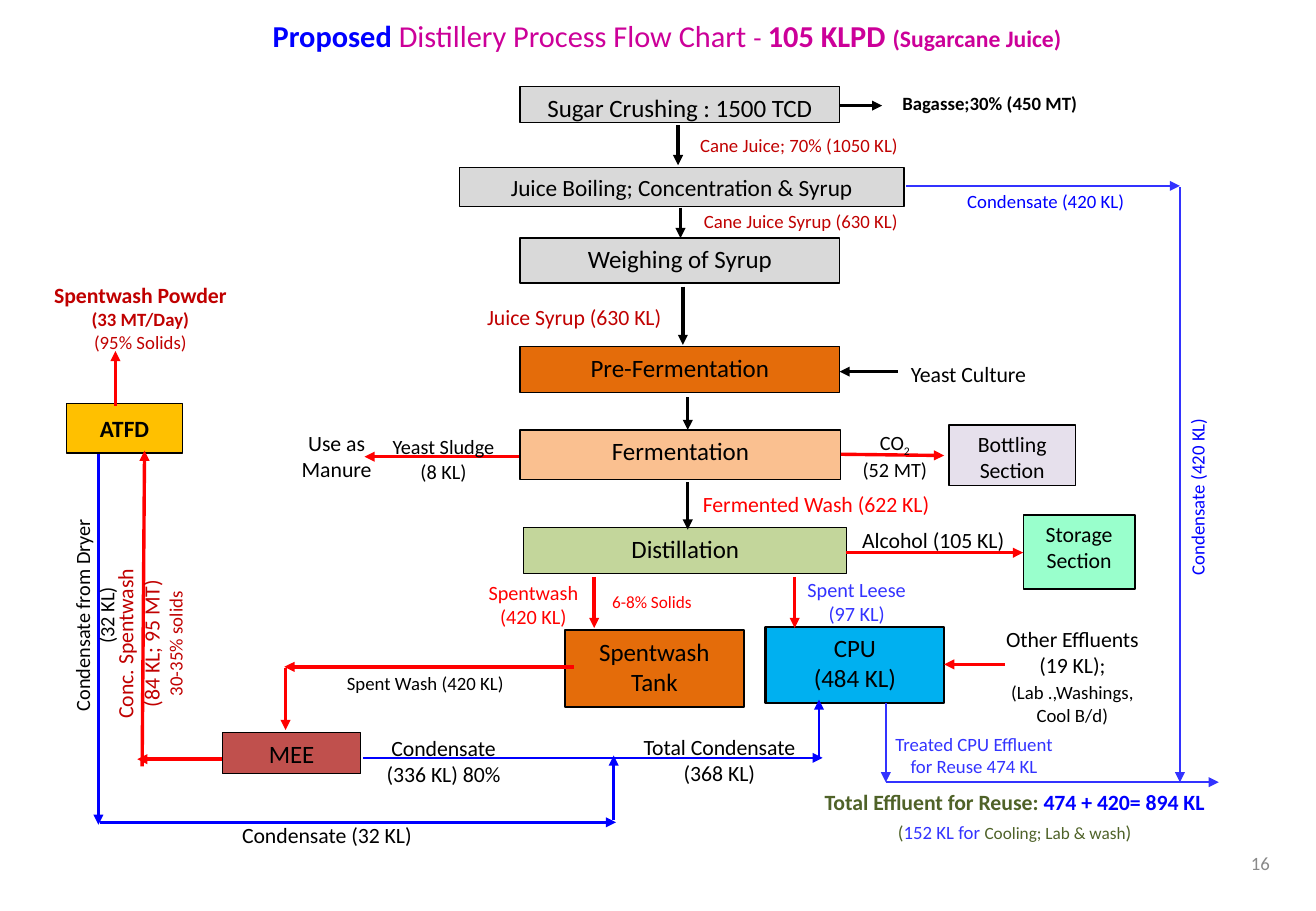
"""Build the distillery process flow chart slide."""
from pptx import Presentation, util as u
from pptx.dml.color import RGBColor
from pptx.enum import shapes, text
from pptx.oxml import ns
from lxml import etree

COLOURS = {
    "black": "000000", "grey": "D9D9D9", "orange": "E46C0A", "peach": "FAC090",
    "sage": "C3D69B", "amber": "FFC000", "sky": "00B0F0", "mint": "99FFCC",
    "lilac": "E6E0EC", "brick": "C0504D", "red": "FF0000", "crimson": "C00000",
    "blue": "0000FF", "indigo": "3333FF", "olive": "4F6228", "magenta": "CC0099",
    "page": "898989",
}
rgb = {name: RGBColor.from_string(value) for name, value in COLOURS.items()}

deck = Presentation()
deck.slide_width, deck.slide_height = u.Inches(10.83), u.Inches(7.5)
slide = deck.slides.add_slide(deck.slide_layouts[6])


def write(frame, lines, size, colour="black", bold=False):
    """Fill a frame; a line is a string or a list of (text, size, colour, bold)."""
    frame.word_wrap = True
    frame.vertical_anchor = text.MSO_ANCHOR.TOP
    for index, line in enumerate(lines):
        paragraph = frame.add_paragraph() if index else frame.paragraphs[0]
        paragraph.alignment = text.PP_ALIGN.CENTER
        pieces = [(line, size, colour, bold)] if isinstance(line, str) else line
        for words, points, ink, heavy in pieces:
            run = paragraph.add_run()
            run.text = words
            run.font.name = "Calibri"
            run.font.size = u.Pt(points)
            run.font.bold = heavy
            run.font.color.rgb = rgb[ink]


def label(place, lines, size, colour="black", bold=False):
    """Add a centred text box and return it."""
    box = slide.shapes.add_textbox(*map(u.Inches, place))
    write(box.text_frame, lines, size, colour, bold)
    return box


steps = [
    ((4.28, 0.71, 2.63, 0.3), "grey", 0.75, ["Sugar Crushing : 1500 TCD"], 14.8),
    ((3.78, 1.38, 3.66, 0.32), "grey", 0.75, ["Juice Boiling; Concentration & Syrup"], 13.8),
    ((4.28, 1.96, 2.63, 0.37), "grey", 0.75, ["Weighing of Syrup"], 14.8),
    ((4.28, 2.85, 2.63, 0.38), "orange", 0.75, ["Pre-Fermentation"], 14.8),
    ((4.28, 3.54, 2.64, 0.41), "peach", 0.75, ["Fermentation"], 14.8),
    ((4.31, 4.34, 2.66, 0.38), "sage", 0.75, ["Distillation"], 14.8),
    ((4.65, 5.19, 1.47, 0.63), "orange", 1.25, ["Spentwash", "Tank"], 14.8),
    ((6.3, 5.16, 1.47, 0.63), "sky", 1.25, ["CPU", "(484 KL)"], 14.8),
    ((1.83, 6.03, 1.14, 0.34), "brick", 0.75, ["MEE"], 14.8),
    ((0.55, 3.32, 0.95, 0.41), "amber", 0.75, ["ATFD"], 13.8),
    ((7.81, 3.5, 1.04, 0.5), "lilac", 0.75, ["Bottling Section"], 12.9),
    ((8.42, 4.24, 0.92, 0.61), "mint", 0.75, ["Storage Section"], 12.9),
]
for place, colour, weight, lines, size in steps:
    step = slide.shapes.add_shape(shapes.MSO_SHAPE.RECTANGLE, *map(u.Inches, place))
    step.shadow.inherit = False
    step.fill.solid()
    step.fill.fore_color.rgb = rgb[colour]
    step.line.color.rgb = rgb["black"]
    step.line.width = u.Pt(weight)
    write(step.text_frame, lines, size, bold=lines == ["ATFD"])
    if lines == ["ATFD"]:
        step.text_frame.vertical_anchor = text.MSO_ANCHOR.MIDDLE

flows = {
    ("black", 2): [
        (5.58, 1.03, 5.58, 1.36), (5.6, 1.71, 5.6, 1.96), (5.62, 2.36, 5.62, 2.84),
        (5.66, 3.27, 5.66, 3.54), (5.66, 3.97, 5.66, 4.36)],
    ("black", 1.5): [(6.91, 0.87, 7.26, 0.87), (7.39, 3.06, 6.91, 3.06)],
    ("red", 2): [
        (4.27, 3.76, 3, 3.76), (6.92, 3.74, 7.77, 3.75), (6.96, 4.55, 8.42, 4.55),
        (4.89, 4.75, 4.89, 5.17), (6.54, 4.75, 6.54, 5.17), (8.27, 5.47, 7.77, 5.47),
        (4.72, 5.49, 2.34, 5.49), (2.35, 5.5, 2.35, 6.01), (1.83, 6.25, 1.13, 6.25),
        (1.17, 6.31, 1.19, 3.71), (0.95, 3.34, 0.95, 2.89)],
    ("blue", 1.5): [
        (2.99, 6.24, 6.77, 6.24), (0.81, 3.74, 0.81, 6.79),
        (0.82, 6.77, 5.07, 6.77), (5.05, 6.75, 5.05, 6.22)],
    ("blue", 1.75): [(6.74, 6.24, 6.74, 5.76)],
    ("indigo", 1.5): [
        (7.46, 1.53, 9.71, 1.53), (9.71, 1.54, 9.71, 6.44),
        (7.29, 5.79, 7.29, 6.44), (7.29, 6.44, 10.03, 6.44)],
}
for (colour, weight), routes in flows.items():
    for route in routes:
        flow = slide.shapes.add_connector(
            shapes.MSO_CONNECTOR.STRAIGHT, *map(u.Inches, route))
        flow.line.color.rgb = rgb[colour]
        flow.line.width = u.Pt(weight)
        etree.SubElement(flow.line._get_or_add_ln(), ns.qn("a:tailEnd"), type="triangle")
        etree.SubElement(flow._element.spPr, ns.qn("a:effectLst"))

label((1.19, 0.09, 8.6, 0.4), [[
    ("Proposed ", 18, "blue", True),
    ("Distillery Process Flow Chart ", 18, "magenta", False),
    ("- ", 16, "magenta", False),
    ("105 KLPD ", 18, "magenta", True),
    ("(Sugarcane Juice)", 14, "magenta", True)]], 18)

notes = [
    ((7.17, 0.71, 1.95, 0.29), ["Bagasse;30% (450 MT)"], 11.1, "black", True),
    ((5.58, 1.05, 1.99, 0.28), ["Cane Juice; 70% (1050 KL)"], 11.1, "crimson"),
    ((7.63, 1.51, 1.95, 0.31), ["Condensate (420 KL)"], 11.1, "blue"),
    ((5.5, 1.68, 2.18, 0.38), ["Cane Juice Syrup (630 KL)"], 11.1, "crimson"),
    ((3.14, 2.45, 3.17, 0.23), ["Juice Syrup (630 KL)"], 12.9, "crimson"),
    ((7.16, 2.92, 1.62, 0.42), ["Yeast Culture"], 12.9),
    ((2.03, 3.49, 1.48, 0.29), ["Use as", "Manure"], 12.9),
    ((2.84, 3.53, 1.62, 0.42), ["Yeast Sludge", "(8 KL)"], 12),
    ((5.27, 3.99, 2.89, 0.38), ["Fermented Wash (622 KL)"], 12.9, "red"),
    ((6.75, 4.29, 1.86, 0.36), ["Alcohol (105 KL)"], 12.9),
    ((3.49, 4.73, 1.8, 0.36), ["Spentwash", "(420 KL)"], 12, "red"),
    ((4.65, 4.82, 1.43, 0.25), ["6-8% Solids"], 10.2, "red"),
    ((6.24, 4.7, 1.62, 0.36), ["Spent Leese", "(97 KL)"], 12, "indigo"),
    ((2.51, 5.48, 1.98, 0.29), ["Spent Wash (420 KL)"], 11.1),
    ((2.9, 6, 1.5, 0.4), ["Condensate", "(336 KL) 80%"], 12.9),
    ((5.08, 5.99, 1.68, 0.36), ["Total Condensate (368 KL)"], 12.9),
    ((7.07, 5.98, 1.89, 0.32), ["Treated CPU Effluent", "for Reuse 474 KL"], 11.1, "indigo"),
    ((1.42, 6.72, 2.54, 0.36), ["Condensate (32 KL)"], 12.9),
    ((0.28, 2.27, 1.75, 0.56), [
        "Spentwash Powder",
        [("(33 MT/Day)", 11.1, "crimson", True)],
        [("(95% Solids)", 11.1, "crimson", False)]], 12.9, "crimson", True),
]
for note in notes:
    label(*note)

carbon_dioxide = label((6.8, 3.49, 1.13, 0.46), [
    [("CO", 12, "black", False), ("2", 12, "black", False)], "(52 MT)"], 12)
subscript = carbon_dioxide.text_frame.paragraphs[0].runs[1]
subscript.font._element.set("baseline", "-25000")

other_effluents = label((8.1, 5.1, 1.45, 0.68), [
    "Other Effluents (19 KL);",
    [("(Lab .,Washings, Cool B/d)", 11.1, "black", False)]], 12.9)
other_effluents.text_frame.paragraphs[1].space_before = u.Pt(2)

total_reuse = label((6.15, 6.44, 4.4, 0.32), [
    [("Total Effluent for Reuse: ", 12.9, "olive", True),
     ("474 + 420= 894 KL", 12.9, "blue", True)],
    [("(", 11.1, "olive", False),
     ("152 KL for ", 11.1, "indigo", False),
     ("Cooling; Lab & wash", 10.2, "olive", False),
     (")", 11.1, "olive", False)]], 12.9)
total_reuse.text_frame.paragraphs[1].space_before = u.Pt(4)

label((9.01, 3.89, 1.8, 0.4), ["Condensate (420 KL)"], 11.1, "blue").rotation = 270
label((-0.45, 4.87, 2.34, 0.39), ["Condensate from Dryer", "(32 KL)"], 12).rotation = 270

concentrate = label((0.87, 4.51, 0.58, 1.58), [
    "Conc. Spentwash", "(84 KL; 95 MT)",
    [("30-35% solids", 11.1, "crimson", False)]], 12.9, "crimson")
concentrate.text_frame._txBody.bodyPr.set("vert", "vert270")

page = label((10.13, 6.92, 0.42, 0.37), ["16"], 11.1, "page")
page.text_frame.vertical_anchor = text.MSO_ANCHOR.MIDDLE
page.text_frame.paragraphs[0].alignment = text.PP_ALIGN.RIGHT

deck.save("out.pptx")
